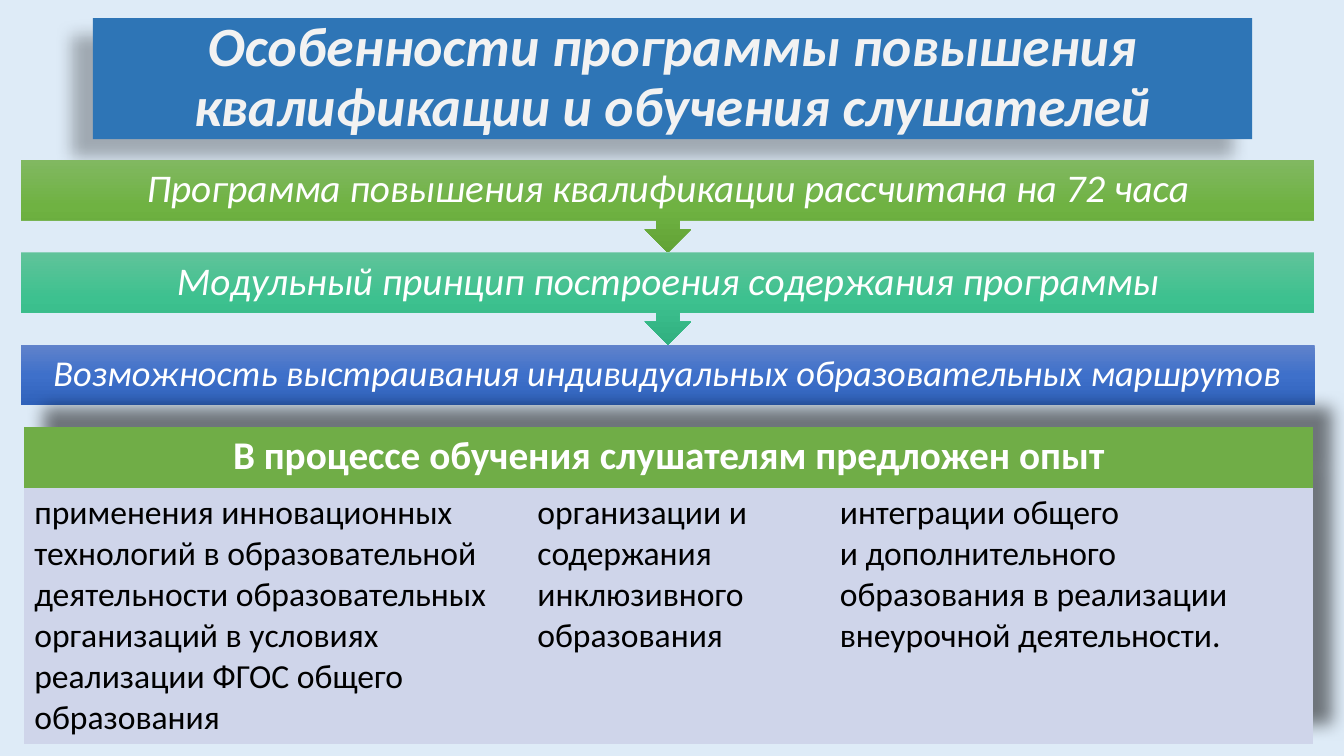
from dataclasses import dataclass
from lxml import etree
from pptx import Presentation
from pptx import util as u
from pptx.dml.color import RGBColor
from pptx.enum import shapes, text
from pptx.oxml import ns


@dataclass(frozen=True)
class Theme:
    font: str = "Calibri"
    back: str = "DEEBF7"
    title: str = "2E75B6"
    pale: str = "F2F2F2"
    white: str = "FFFFFF"
    black: str = "000000"
    head: str = "70AD47"
    cell: str = "CFD5EA"
    lime: tuple = ("81B861", "6FB242", "62A336")
    mint: tuple = ("60C39A", "3DC18F", "31B080")
    blue: tuple = ("6183CB", "3E70CA", "3062BB")
    big: float = 39.6
    mid: float = 28
    slim: float = 26
    base: float = 24


T = Theme()


def node(up, tag, **keys):
    return etree.SubElement(up, ns.qn(tag), {k: str(v) for k, v in keys.items()})


def paint(fill, tone):
    fill.solid()
    fill.fore_color.rgb = RGBColor.from_string(tone)


def style(frame, size, tone, bold=False, slant=False, align=None, lead=None):
    for para in frame.paragraphs:
        para.alignment = align
        para.line_spacing = lead
        for run in para.runs:
            font = run.font
            font.name, font.size = T.font, u.Pt(size)
            font.bold, font.italic = bold, slant
            font.color.rgb = RGBColor.from_string(tone)


def shade(up, blur, dist, angle, alpha):
    cast = node(node(up, "a:effectLst"), "a:outerShdw", blurRad=u.Pt(blur),
                dist=u.Pt(dist), dir=angle * 60000, algn="ctr", rotWithShape=0)
    tone = node(cast, "a:srgbClr", val=T.black)
    node(tone, "a:alpha", val=alpha * 1000)


def blend(shape, tones):
    shape.fill.background()
    props = shape._element.spPr
    grad = etree.Element(ns.qn("a:gradFill"), rotWithShape="1")
    stops = node(grad, "a:gsLst")
    for i, tone in enumerate(tones):
        node(node(stops, "a:gs", pos=i * 50000), "a:srgbClr", val=tone)
    node(grad, "a:lin", ang=5400000, scaled=0)
    props.replace(props.find(ns.qn("a:noFill")), grad)


def header(slide, box, words):
    title = slide.shapes.title
    title.left, title.top, title.width, title.height = box
    paint(title.fill, T.title)
    shade(title._element.spPr, 11.8, 19.7, 141, 28)
    frame = title.text_frame
    frame.text = words
    frame.word_wrap = True
    frame.auto_size = text.MSO_AUTO_SIZE.NONE
    frame.vertical_anchor = text.MSO_ANCHOR.MIDDLE
    style(frame, T.big, T.pale, True, True, text.PP_ALIGN.CENTER, 0.9)


def steps(slide, box, items):
    left, top, width, height = box
    bar = u.Inches(0.6)
    pitch = (height - bar) // (len(items) - 1)
    for i, (words, tones, size) in reversed(list(enumerate(items))):
        last = i == len(items) - 1
        kind = shapes.MSO_SHAPE.RECTANGLE if last else shapes.MSO_SHAPE.DOWN_ARROW_CALLOUT
        step = slide.shapes.add_shape(kind, left, top + i * pitch, width, bar if last else pitch)
        step.shadow.inherit = False
        step.line.fill.background()
        blend(step, tones)
        frame = step.text_frame
        frame.text = words
        frame.word_wrap = True
        frame.margin_left = frame.margin_right = u.Inches(0.2)
        frame.margin_top = frame.margin_bottom = 0
        frame.vertical_anchor = text.MSO_ANCHOR.MIDDLE
        style(frame, size, T.white, slant=True, align=text.PP_ALIGN.CENTER, lead=0.9)


def grid(slide, box, head, cells, wide):
    table = slide.shapes.add_table(2, len(cells), *box).table
    props = table._tbl.tblPr
    props.find(ns.qn("a:tableStyleId")).text = "{2D5ABB26-0587-4C30-8999-92F81FD0307C}"
    shade(props, 11.8, 19.7, 315, 50)
    props.insert(0, props[-1])
    for col, size in zip(table.columns, wide):
        col.width = u.Inches(size)
    table.rows[0].height = u.Inches(0.6)
    table.rows[1].height = box[3] - u.Inches(0.6)
    top = table.cell(0, 0)
    top.merge(table.cell(0, len(cells) - 1))
    top.text_frame.text = head
    paint(top.fill, T.head)
    style(top.text_frame, T.mid, T.white, True, align=text.PP_ALIGN.CENTER)
    for i, words in enumerate(cells):
        cell = table.cell(1, i)
        cell.text_frame.text = words
        paint(cell.fill, T.cell)
        style(cell.text_frame, T.base, T.black)


def area(*sides):
    return [u.Inches(side) for side in sides]


def main():
    deck = Presentation()
    deck.slide_width, deck.slide_height = area(13.33, 7.5)
    slide = deck.slides.add_slide(deck.slide_layouts[5])
    paint(slide.background.fill, T.back)
    header(slide, area(0.92, 0.18, 11.5, 1.2),
           "Особенности программы повышения квалификации и обучения слушателей")
    steps(slide, area(0.21, 1.59, 12.83, 2.43), [
        ("Программа повышения квалификации рассчитана на 72 часа", T.lime, T.mid),
        ("Модульный принцип построения содержания программы", T.mint, T.mid),
        ("Возможность выстраивания индивидуальных образовательных маршрутов", T.blue, T.slim),
    ])
    grid(slide, area(0.24, 4.24, 12.78, 3.1),
         "В процессе обучения слушателям предложен опыт", [
             "применения инновационных технологий в образовательной деятельности "
             "образовательных организаций в условиях реализации ФГОС общего образования",
             "организации и содержания инклюзивного образования",
             "интеграции общего\nи дополнительного образования в реализации "
             "внеурочной деятельности.",
         ], (4.99, 3, 4.79))
    deck.save("out.pptx")


if __name__ == "__main__":
    main()
